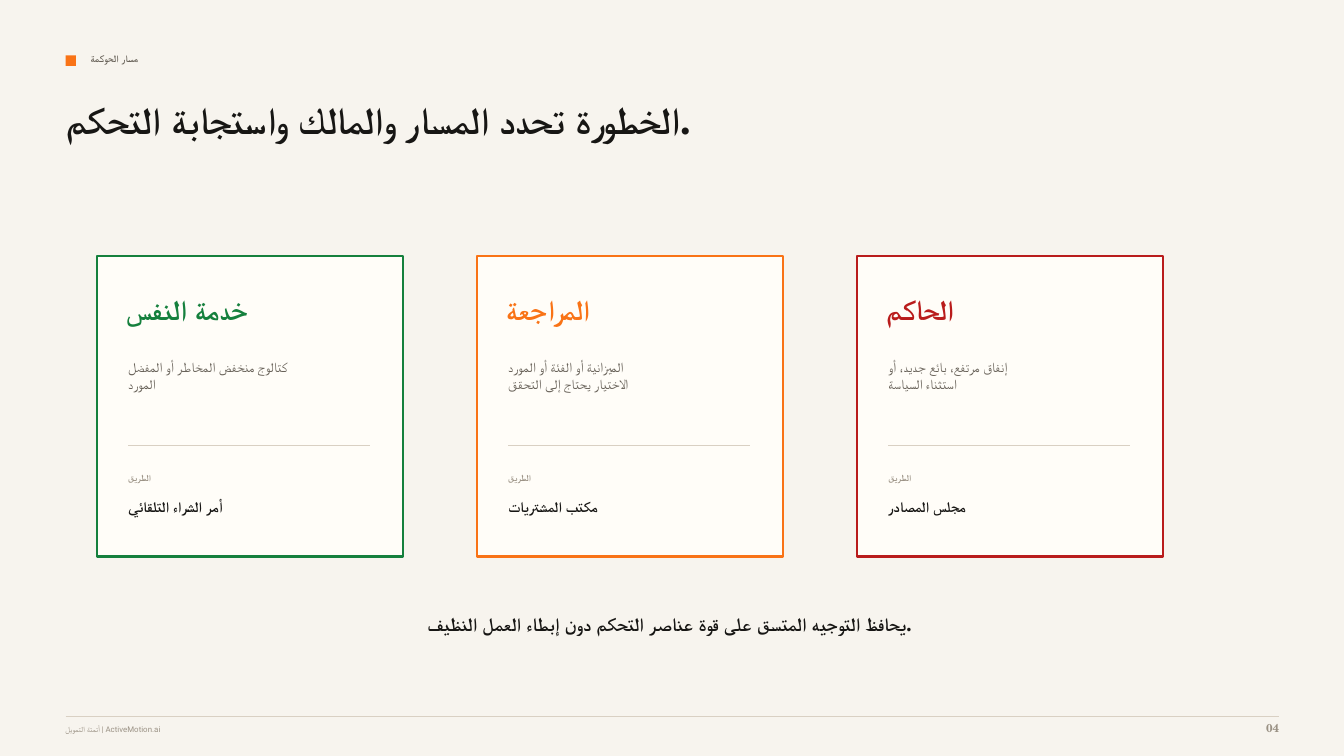
import pptx
import pptx.util
import pptx.dml.color
import pptx.enum.shapes
import pptx.enum.text
import pptx.oxml.ns
import lxml.etree

Pt = pptx.util.Pt
color = pptx.dml.color.RGBColor.from_string
ALIGN = pptx.enum.text.PP_ALIGN

SERIF, SANS = "TeX Gyre Schola", "Roboto"
INK, GRAY, MUTED, RULE = "171614", "69635A", "9A9184", "D9D0C3"
ORANGE = "F97316"
MARGIN = 46.8

presentation = pptx.Presentation()
presentation.slide_width = Pt(960)
presentation.slide_height = Pt(540)
slide = presentation.slides.add_slide(presentation.slide_layouts[6])
slide.background.fill.solid()
slide.background.fill.fore_color.rgb = color("F7F4EE")


def add_text(text, left, top, width, height, size, font, ink, bold=True, align=ALIGN.LEFT):
    text_frame = slide.shapes.add_textbox(Pt(left), Pt(top), Pt(width), Pt(height)).text_frame
    text_frame.margin_left = text_frame.margin_right = 0
    text_frame.margin_top = text_frame.margin_bottom = 0
    text_frame.word_wrap = True
    text_frame.text = text
    for paragraph in text_frame.paragraphs:
        paragraph.alignment = align
        for run in paragraph.runs:
            run.font.size = Pt(size)
            run.font.name = font
            run.font.bold = bold
            run.font.color.rgb = color(ink)


def add_rule(left, top, width):
    rule = slide.shapes.add_connector(
        pptx.enum.shapes.MSO_CONNECTOR.STRAIGHT, Pt(left), Pt(top), Pt(left + width), Pt(top))
    rule.line.color.rgb = color(RULE)
    rule.line.width = Pt(0.75)
    lxml.etree.SubElement(rule._element.spPr, pptx.oxml.ns.qn("a:effectLst"))


marker = slide.shapes.add_shape(
    pptx.enum.shapes.MSO_SHAPE.RECTANGLE, Pt(MARGIN), Pt(39.6), Pt(7.5), Pt(7.5))
marker.shadow.inherit = False
marker.fill.solid()
marker.fill.fore_color.rgb = color(ORANGE)
marker.line.fill.background()

add_text("مسار الحوكمة", 64.8, 37.5, 420, 13.5, 7.1, SANS, GRAY)
add_text("الخطورة تحدد المسار والمالك واستجابة التحكم.", MARGIN, 69, 675, 73.5, 27, SERIF, INK)

routes = [
    ("خدمة النفس", "كتالوج منخفض المخاطر أو المفضل\nالمورد", "أمر الشراء التلقائي", "15803D"),
    ("المراجعة", "الميزانية أو الفئة أو المورد\nالاختيار يحتاج إلى التحقق", "مكتب المشتريات", ORANGE),
    ("الحاكم", "إنفاق مرتفع، بائع جديد، أو\nاستثناء السياسة", "مجلس المصادر", "B91C1C"),
]
for index, (title, description, owner, accent) in enumerate(routes):
    left = 69 + index * 271.5
    inner = left + 22.5
    card = slide.shapes.add_shape(
        pptx.enum.shapes.MSO_SHAPE.RECTANGLE, Pt(left), Pt(183), Pt(219), Pt(214.5))
    card.shadow.inherit = False
    card.fill.solid()
    card.fill.fore_color.rgb = color("FFFDF8")
    card.line.color.rgb = color(accent)
    card.line.width = Pt(1.5)
    add_text(title, left + 21, 208.8, 165, 25.2, 20.2, SERIF, accent)
    add_text(description, inner, 256.3, 168, 37.5, 9.8, SANS, GRAY, bold=False)
    add_rule(inner, 318.4, 172.5)
    add_text("الطريق", inner, 337.7, 120, 10.8, 6.4, SANS, MUTED)
    add_text(owner, inner, 355.7, 165, 16.5, 10.5, SANS, INK)

add_text("يحافظ التوجيه المتسق على قوة عناصر التحكم دون إبطاء العمل النظيف.",
         133.2, 437.8, 690, 21, 13.5, SERIF, INK, align=ALIGN.CENTER)

add_rule(MARGIN, 511.6, 866.9)
add_text("أتمتة التمويل | ActiveMotion.ai", MARGIN, 517.7, 570, 10.8, 5.6, SANS, MUTED, bold=False)
add_text("04", 877.7, 514.8, 36, 13.7, 8.2, SERIF, MUTED, align=ALIGN.RIGHT)

presentation.save("out.pptx")
